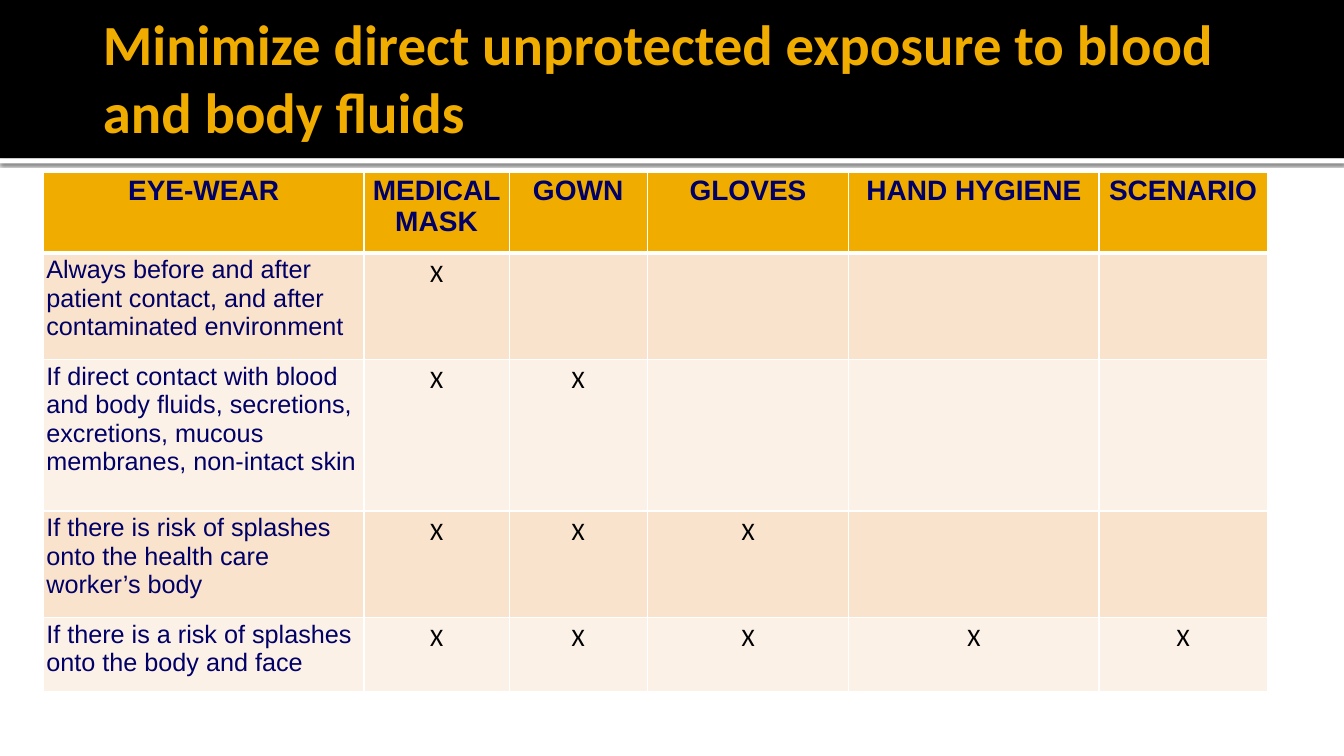
from dataclasses import dataclass

import lxml.etree
import pptx
import pptx.dml.color
import pptx.enum.shapes
import pptx.enum.text
import pptx.oxml
import pptx.oxml.ns
import pptx.util

PX = 9144  # EMU in one px, 100 px to the inch


@dataclass(frozen=True)
class Theme:
    gold: str = "F0AD00"
    navy: str = "000066"
    black: str = "000000"
    white: str = "FFFFFF"
    bands: tuple[str, str] = ("F9E3CC", "FCF1E7")
    title_font: str = "Calibri"
    table_font: str = "Arial"
    title_size: float = 40.5
    header_size: float = 20
    body_size: float = 18
    rule: float = 1
    header_rule: float = 3


@dataclass(frozen=True)
class Band:
    top: int
    height: int
    color: str
    shadow: bool


@dataclass(frozen=True)
class Scenario:
    text: str
    marks: int
    height: int


THEME = Theme()
SLIDE_WIDTH, SLIDE_HEIGHT = 1333, 750
TITLE = "Minimize direct unprotected exposure to blood and body fluids"
BANDS = [
    Band(157, 5, THEME.white, shadow=True),
    Band(0, 157, THEME.black, shadow=False),
]
COLUMNS = {
    "EYE-WEAR": 318,
    "MEDICAL MASK": 144,
    "GOWN": 137,
    "GLOVES": 200,
    "HAND HYGIENE": 248,
    "SCENARIO": 167,
}
HEADER_HEIGHT = 80
SCENARIOS = [
    Scenario("Always before and after patient contact, and after contaminated environment", 1, 106),
    Scenario(
        "If direct contact with blood and body fluids, secretions, excretions, "
        "mucous membranes, non-intact skin", 2, 150),
    Scenario("If there is risk of splashes onto the health care worker’s body", 3, 106),
    Scenario("If there is a risk of splashes onto the body and face", 5, 73),
]


def px(length: int) -> pptx.util.Emu:
    return pptx.util.Emu(length * PX)


def rgb(color: str) -> pptx.dml.color.RGBColor:
    return pptx.dml.color.RGBColor.from_string(color)


def style_text(para, font: str, size: float, color: str, bold: bool = False) -> None:
    para.font.name = font
    para.font.size = pptx.util.Pt(size)
    para.font.bold = bold
    para.font.color.rgb = rgb(color)


def draw_band(page, band: Band) -> None:
    shape = page.shapes.add_shape(
        pptx.enum.shapes.MSO_SHAPE.RECTANGLE, 0, px(band.top), px(SLIDE_WIDTH), px(band.height))
    shape.fill.solid()
    shape.fill.fore_color.rgb = rgb(band.color)
    shape.line.fill.background()
    shape.shadow.inherit = False
    if band.shadow:
        effects = shape.element.spPr.find(pptx.oxml.ns.qn("a:effectLst"))
        effects.append(pptx.oxml.parse_xml(
            f'<a:outerShdw {pptx.oxml.ns.nsdecls("a")} blurRad="31750" dist="10160" '
            f'dir="5400000" rotWithShape="0"><a:srgbClr val="{THEME.black}">'
            '<a:alpha val="60000"/></a:srgbClr></a:outerShdw>'))


def draw_title(page) -> None:
    title = page.shapes.title
    title.left, title.top, title.width, title.height = px(92), px(40), px(1200), px(73)
    frame = title.text_frame
    frame.text = TITLE
    frame.word_wrap = True
    frame.auto_size = pptx.enum.text.MSO_AUTO_SIZE.NONE
    frame.vertical_anchor = pptx.enum.text.MSO_ANCHOR.MIDDLE
    frame.margin_left = px(10)
    frame.margin_right = frame.margin_top = frame.margin_bottom = px(5)
    para = frame.paragraphs[0]
    para.alignment = pptx.enum.text.PP_ALIGN.LEFT
    style_text(para, THEME.title_font, THEME.title_size, THEME.gold, bold=True)
    # Bring the title in front of the bands
    title.element.getparent().append(title.element)


def format_cell(cell, fill: str, bottom_rule: float = THEME.rule) -> None:
    properties = cell._tc.get_or_add_tcPr()
    rules = {"lnL": THEME.rule, "lnR": THEME.rule, "lnT": THEME.rule, "lnB": bottom_rule}
    for side, width in rules.items():
        line = lxml.etree.SubElement(
            properties, pptx.oxml.ns.qn(f"a:{side}"), w=str(pptx.util.Pt(width)))
        solid = lxml.etree.SubElement(line, pptx.oxml.ns.qn("a:solidFill"))
        lxml.etree.SubElement(solid, pptx.oxml.ns.qn("a:srgbClr"), val=THEME.white)
    cell.fill.solid()
    cell.fill.fore_color.rgb = rgb(fill)


def write_label(cell, text: str, size: float, header: bool) -> None:
    cell.text = text
    cell.margin_left = cell.margin_right = cell.margin_top = cell.margin_bottom = px(3)
    para = cell.text_frame.paragraphs[0]
    align = pptx.enum.text.PP_ALIGN
    para.alignment = align.CENTER if header else align.LEFT
    style_text(para, THEME.table_font, size, THEME.navy, bold=header)


def write_mark(cell) -> None:
    cell.text = "X"
    para = cell.text_frame.paragraphs[0]
    para.alignment = pptx.enum.text.PP_ALIGN.CENTER
    style_text(para, THEME.title_font, THEME.body_size, THEME.black)


def draw_table(page) -> None:
    heights = [HEADER_HEIGHT] + [scenario.height for scenario in SCENARIOS]
    table = page.shapes.add_table(
        len(heights), len(COLUMNS), px(43), px(171),
        px(sum(COLUMNS.values())), px(sum(heights))).table
    table.horz_banding = False
    for row, height in zip(table.rows, heights):
        row.height = px(height)

    # Header row
    for index, (label, width) in enumerate(COLUMNS.items()):
        table.columns[index].width = px(width)
        cell = table.cell(0, index)
        format_cell(cell, THEME.gold, THEME.header_rule)
        write_label(cell, label, THEME.header_size, header=True)

    # Scenario rows
    for index, scenario in enumerate(SCENARIOS):
        for column, cell in enumerate(table.rows[index + 1].cells):
            format_cell(cell, THEME.bands[index % 2])
            if column == 0:
                write_label(cell, scenario.text, THEME.body_size, header=False)
            elif column <= scenario.marks:
                write_mark(cell)


def main() -> None:
    deck = pptx.Presentation()
    deck.slide_width, deck.slide_height = px(SLIDE_WIDTH), px(SLIDE_HEIGHT)
    page = deck.slides.add_slide(deck.slide_layouts.get_by_name("Title Only"))
    for band in BANDS:
        draw_band(page, band)
    draw_title(page)
    draw_table(page)
    deck.save("out.pptx")


if __name__ == "__main__":
    main()
